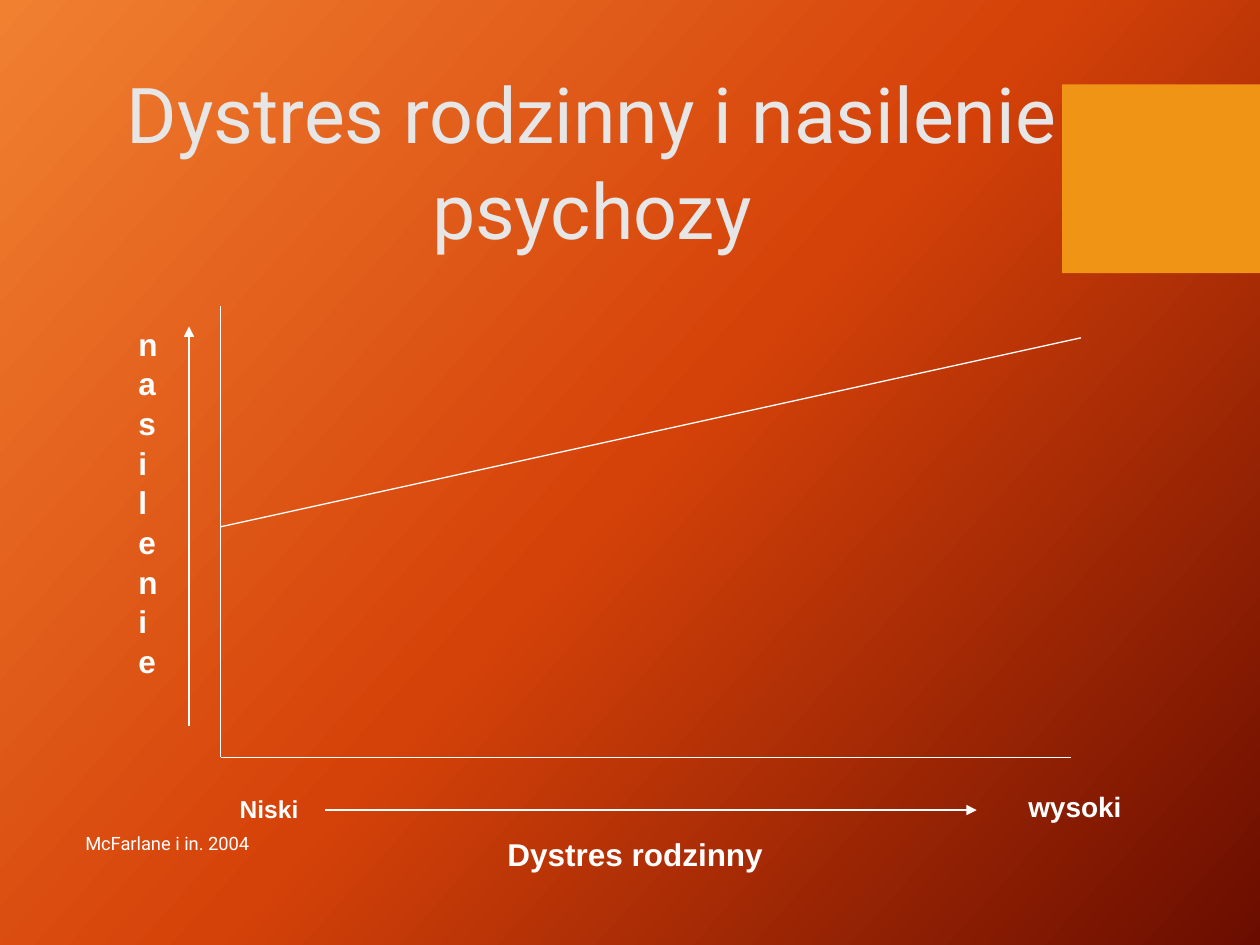
from copy import deepcopy
from dataclasses import dataclass

from lxml.etree import SubElement
from pptx import Presentation
from pptx.dml.color import RGBColor
from pptx.enum.shapes import MSO_CONNECTOR, MSO_SHAPE
from pptx.enum.text import MSO_ANCHOR, PP_ALIGN
from pptx.oxml.ns import qn
from pptx.util import Cm, Pt


@dataclass(frozen=True)
class Theme:
    """Colours, fonts and type sizes of the slide."""
    white: str = "FFFFFF"
    pale: str = "E7E6E6"
    accent: str = "F09415"
    grad: tuple = ((0, "F18031"), (0.5, "D54209"), (1, "6A0D00"))
    angle: int = 318
    head: str = "Roboto"
    body: str = "Arial"
    title: float = 44
    label: float = 18
    high: float = 16
    low: float = 14
    note: float = 10.5
    rule: float = 0.75


class Board:
    """Draws styled elements on one slide."""

    def __init__(self, slide, theme):
        self.slide = slide
        self.theme = theme

    def backdrop(self):
        """Fill the background with the theme gradient."""
        fill = self.slide.background.fill
        fill.gradient()
        fill.gradient_angle = self.theme.angle
        stops = self.slide.element.find(".//" + qn("a:gsLst"))
        stops.append(deepcopy(stops[0]))
        for stop, (place, tint) in zip(fill.gradient_stops, self.theme.grad):
            stop.position = place
            stop.color.rgb = RGBColor.from_string(tint)

    def block(self, box, tint):
        """Add a plain filled rectangle."""
        shape = self.slide.shapes.add_shape(MSO_SHAPE.RECTANGLE, *map(Cm, box))
        shape.shadow.inherit = False
        shape.fill.solid()
        shape.fill.fore_color.rgb = RGBColor.from_string(tint)
        shape.line.fill.background()

    def text(self, box, words, size, face=None, tint=None, bold=True,
             align=PP_ALIGN.CENTER, anchor=MSO_ANCHOR.TOP, lead=None):
        """Add a wrapped text box with one paragraph."""
        frame = self.slide.shapes.add_textbox(*map(Cm, box)).text_frame
        frame.word_wrap = True
        frame.vertical_anchor = anchor
        para = frame.paragraphs[0]
        para.text = words
        para.alignment = align
        para.line_spacing = lead
        font = para.font
        font.name = face or self.theme.body
        font.size = Pt(size)
        font.bold = bold
        font.color.rgb = RGBColor.from_string(tint or self.theme.white)

    def line(self, start, end, arrow=False):
        """Add a thin straight line, with an arrowhead at its end if asked."""
        link = self.slide.shapes.add_connector(
            MSO_CONNECTOR.STRAIGHT, *map(Cm, start + end))
        link.line.width = Pt(self.theme.rule)
        link.line.color.rgb = RGBColor.from_string(self.theme.white)
        if arrow:
            SubElement(link.line._get_or_add_ln(), qn("a:tailEnd"), type="triangle")
        SubElement(link.element.spPr, qn("a:effectLst"))


def main():
    """Build the slide and save it."""
    deck = Presentation()
    deck.slide_width, deck.slide_height = Cm(25.4), Cm(19.05)
    theme = Theme()
    board = Board(deck.slides.add_slide(deck.slide_layouts[6]), theme)

    board.backdrop()
    board.block((21.41, 1.7, 3.99, 3.81), theme.accent)
    board.text((1.19, 1.17, 21.49, 3.48), "Dystres rodzinny i nasilenie psychozy",
               theme.title, theme.head, theme.pale, bold=False, lead=1.03)

    left, base = 4.45, 15.27
    board.line((left, 6.17), (left, base))
    board.line((left, base), (21.59, base))
    board.line((left, 10.62), (21.79, 6.81))

    board.text((7.19, 16.71, 11.23, 1.02), "Dystres rodzinny", theme.label)
    board.text((2.54, 6.38, 0.64, 7.19), "nasilenie", theme.label,
               align=PP_ALIGN.LEFT, lead=1.05)
    board.text((4.37, 15.88, 2.11, 0.86), "Niski", theme.low)
    board.text((20.12, 15.8, 3.1, 0.94), "wysoki", theme.high)

    board.line((3.81, 14.63), (3.81, 6.58), arrow=True)
    board.line((6.55, 16.33), (19.69, 16.33), arrow=True)
    board.text((1.47, 16.48, 13.44, 1.02), "McFarlane i in. 2004", theme.note,
               theme.head, bold=False, align=PP_ALIGN.LEFT,
               anchor=MSO_ANCHOR.MIDDLE)
    deck.save("out.pptx")


if __name__ == "__main__":
    main()
